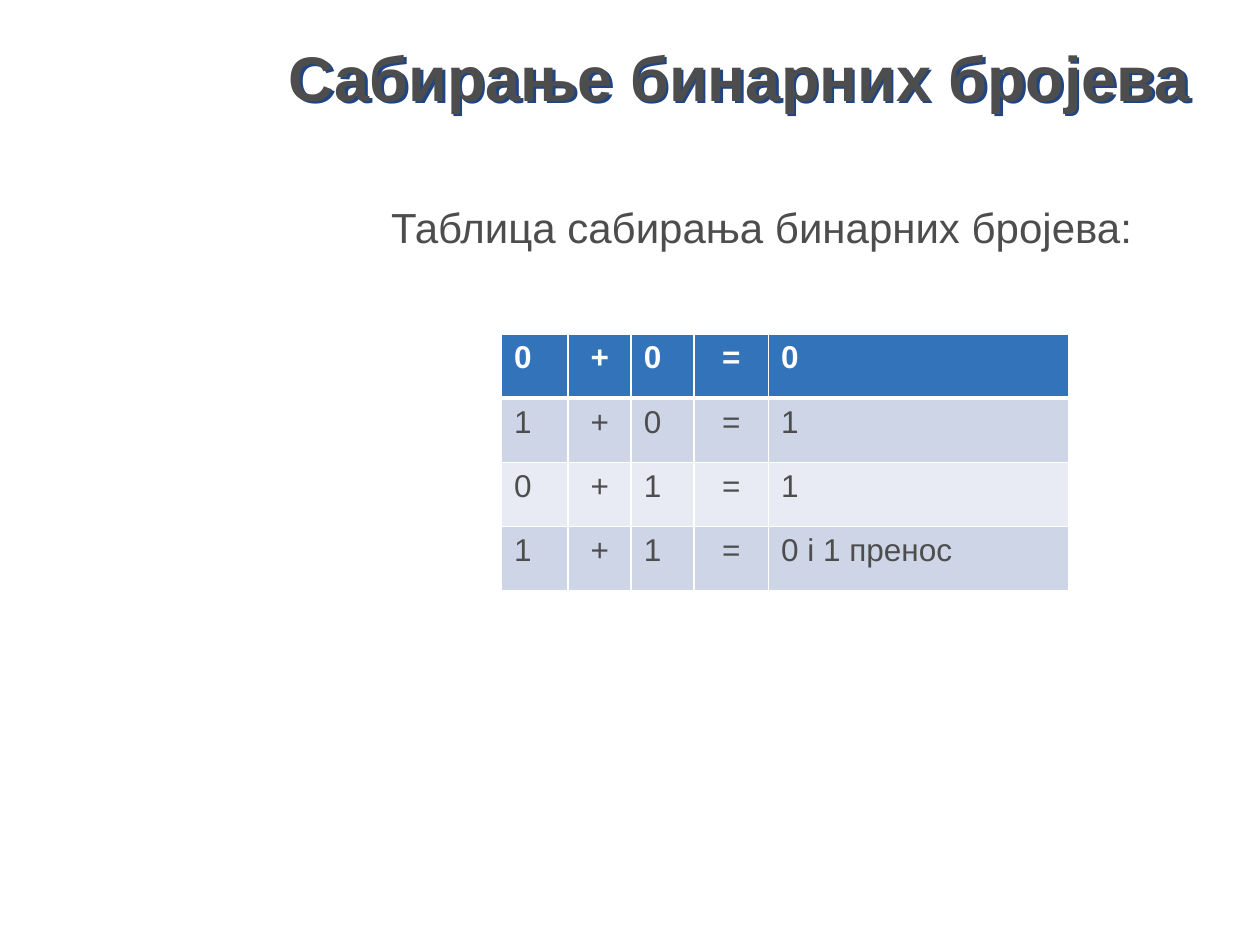
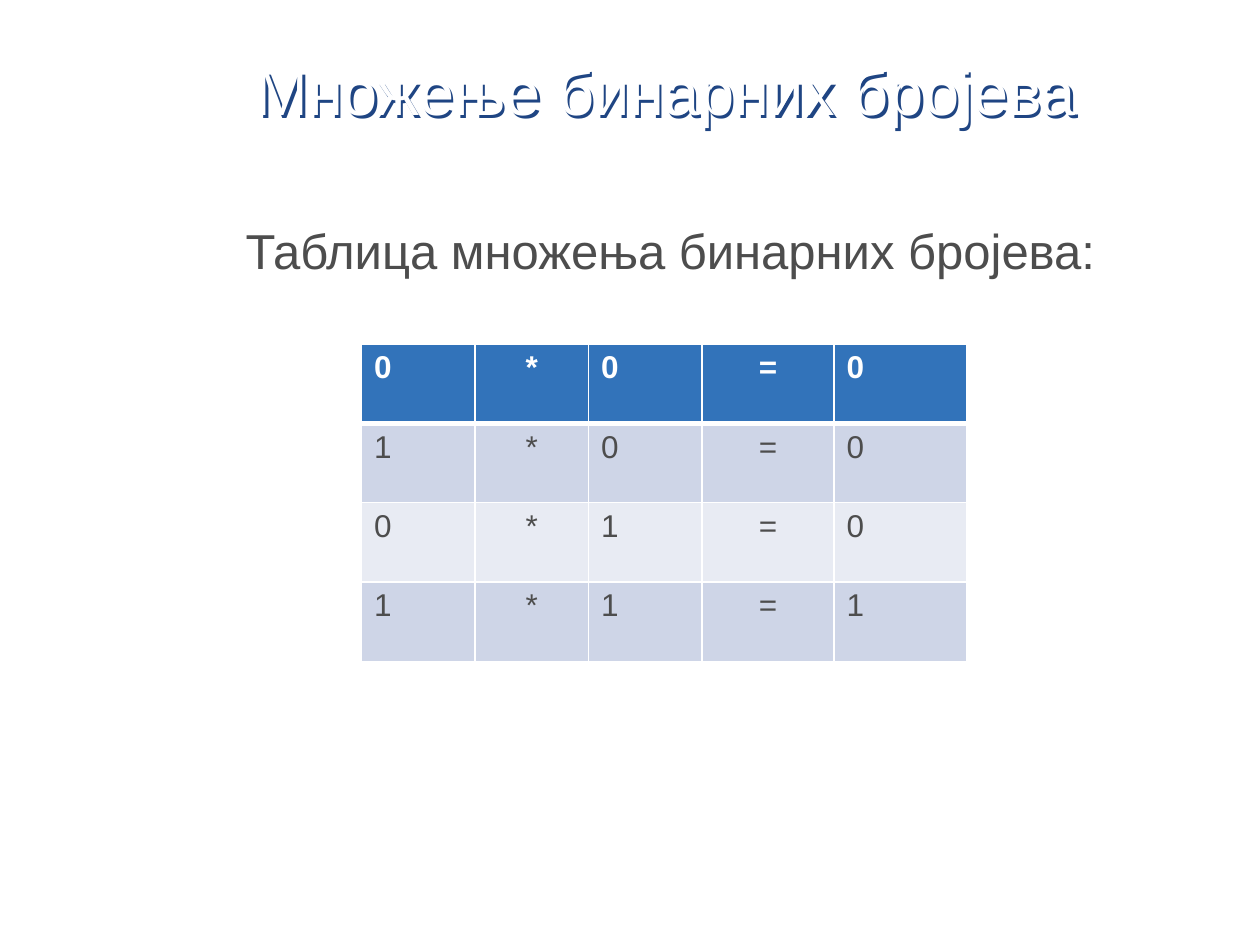
from lxml import etree
from pptx import Presentation
from pptx.dml.color import RGBColor
from pptx.enum.text import MSO_ANCHOR as Anchor, MSO_AUTO_SIZE as Fit, PP_ALIGN as Align
from pptx.oxml import parse_xml
from pptx.oxml.ns import nsdecls, qn
from pptx.util import Inches, Pt

FONT = "Arial"
WHITE, GREY, NAVY = "FFFFFF", "4D4D4D", "1F4583"
HEAD, ODD, EVEN = "3273BA", "CED5E7", "E8EBF3"


def rgb(code):
    return RGBColor.from_string(code)


def style(frame, size, color, bold=False, align=Align.LEFT):
    for para in frame.paragraphs:
        para.alignment = align
        for run in para.runs:
            font = run.font
            font.name, font.size, font.bold = FONT, Pt(size), bold
            font.color.rgb = rgb(color)


def place(shape, box):
    shape.left, shape.top, shape.width, shape.height = map(Inches, box)


def shade(shape):
    """Give the text of an unfilled shape a navy shadow."""
    shape.fill.background()
    shape._element.spPr.append(parse_xml(
        f'<a:effectLst {nsdecls("a")}>'
        '<a:outerShdw dist="25400" dir="2700000" algn="ctr" rotWithShape="0">'
        f'<a:srgbClr val="{NAVY}"/></a:outerShdw></a:effectLst>'))


def add_title(slide, text, box, color, bold, align):
    title = slide.shapes.title
    place(title, box)
    frame = title.text_frame
    frame.text = text
    frame.auto_size, frame.word_wrap = Fit.NONE, True
    frame.vertical_anchor = Anchor.MIDDLE
    style(frame, 36, color, bold, align)
    shade(title)


def add_body(slide, text, box, size, align):
    frame = slide.shapes.add_textbox(*map(Inches, box)).text_frame
    frame.word_wrap = True
    frame.text = text
    style(frame, size, GREY, align=align)


def edge(cell, side, width):
    """Draw a white border on one side (L, R, T or B) of a cell."""
    props = cell._tc.get_or_add_tcPr()
    line = etree.SubElement(props, qn(f"a:ln{side}"), w=str(Pt(width)))
    fill = etree.SubElement(line, qn("a:solidFill"))
    etree.SubElement(fill, qn("a:srgbClr"), val=WHITE)


def add_sums(slide, rows, left, top, widths, height):
    """Add a table with one sum per row, one symbol per column."""
    grid = slide.shapes.add_table(
        len(rows), len(widths), Inches(left), Inches(top),
        Inches(sum(widths)), Inches(height * len(rows))).table
    for col, width in zip(grid.columns, widths):
        col.width = Inches(width)
    for r, row in enumerate(rows):
        grid.rows[r].height = Inches(height)
        first = r == 0
        for c, text in enumerate(row.split(" ", len(widths) - 1)):
            cell = grid.cell(r, c)
            cell.text = text
            style(cell.text_frame, 18, WHITE if first else GREY, first,
                  Align.CENTER if c % 2 else Align.LEFT)
            edge(cell, "L", 1)
            edge(cell, "R", 1)
            edge(cell, "T", 3 if r == 1 else 1)
            edge(cell, "B", 3 if first else 1)
            cell.fill.solid()
            cell.fill.fore_color.rgb = rgb(HEAD if first else ODD if r % 2 else EVEN)


def main():
    deck = Presentation()
    deck.slide_width, deck.slide_height = Inches(10), Inches(7.5)
    layout = deck.slide_layouts[5]

    slide = deck.slides.add_slide(layout)
    add_title(slide, "Сабирање бинарних бројева", (2.09, 0.21, 7.56, 0.79),
              GREY, True, Align.CENTER)
    add_body(slide, "Таблица сабирања бинарних бројева:",
             (2.09, 1.55, 7.91, 5.83), 24, Align.CENTER)
    add_sums(slide, ["0 + 0 = 0", "1 + 0 = 1", "0 + 1 = 1", "1 + 1 = 0 i 1 пренос"],
             3.98, 2.65, [0.53, 0.5, 0.5, 0.59, 2.38], 0.51)

    slide = deck.slides.add_slide(layout)
    add_title(slide, "Множење бинарних бројева", (1.93, 0.44, 7.17, 0.56),
              WHITE, False, Align.LEFT)
    add_body(slide, "Таблица множења бинарних бројева:",
             (1.85, 1.7, 7.88, 5.43), 28, Align.LEFT)
    add_sums(slide, ["0 * 0 = 0", "1 * 0 = 0", "0 * 1 = 0", "1 * 1 = 1"],
             2.87, 2.73, [0.9, 0.9, 0.9, 1.05, 1.05], 0.63)

    deck.save("out.pptx")


if __name__ == "__main__":
    main()
